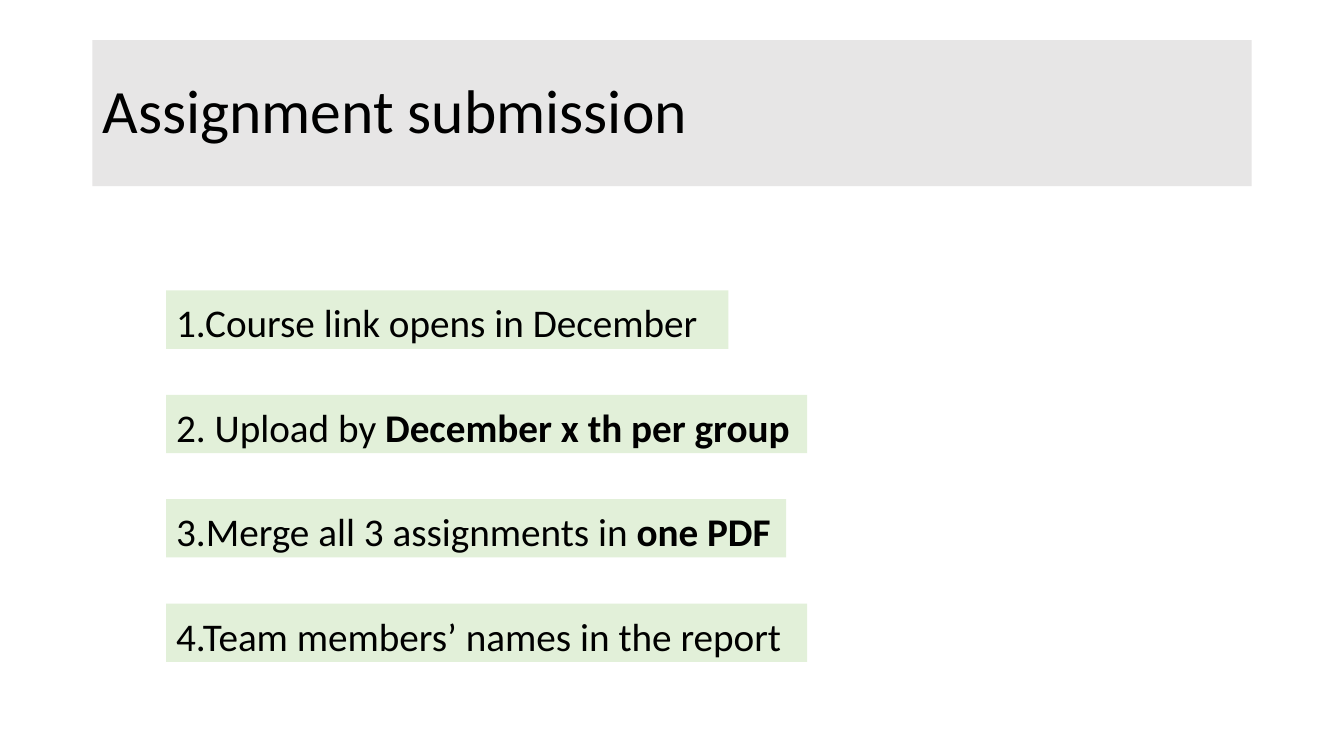
"""Build the assignment submission slide."""
from pptx import Presentation
from pptx.dml.color import RGBColor
from pptx.enum.text import MSO_ANCHOR, MSO_AUTO_SIZE, PP_ALIGN
from pptx.util import Cm, Pt

HEADING = "Assignment submission"
STEPS = [
    (14.17, [("1.Course link opens in December", False)]),
    (16.15, [("2. Upload by ", False), ("December x th per group", True)]),
    (15.62, [("3.Merge all 3 assignments in ", False), ("one PDF", True)]),
    (16.15, [("4.Team members’ names in the report", False)]),
]
FONT, INK, HEADING_FILL, STEP_FILL = "Calibri", "000000", "E7E6E6", "E2F0D9"
STEP_LEFT, STEP_TOP, STEP_HEIGHT, STEP_PITCH = 4.19, 7.32, 1.47, 2.63


def color(value):
    return RGBColor.from_string(value)


def write(box, runs, *, size, fill, spacing, after=0, anchor=MSO_ANCHOR.TOP):
    box.fill.solid()
    box.fill.fore_color.rgb = color(fill)
    frame = box.text_frame
    frame.word_wrap = True
    frame.auto_size = MSO_AUTO_SIZE.NONE
    frame.vertical_anchor = anchor
    paragraph = frame.paragraphs[0]
    paragraph.alignment = PP_ALIGN.LEFT
    paragraph.line_spacing = spacing
    paragraph.space_after = Pt(after)
    for words, bold in runs:
        run = paragraph.add_run()
        run.text = words
        run.font.name = FONT
        run.font.size = Pt(size)
        run.font.bold = bold
        run.font.color.rgb = color(INK)


def main():
    deck = Presentation()
    deck.slide_width, deck.slide_height = Cm(33.87), Cm(19.05)
    slide = deck.slides.add_slide(deck.slide_layouts[5])

    heading = slide.shapes.title
    heading.left, heading.top = Cm(2.33), Cm(1.01)
    heading.width, heading.height = Cm(29.21), Cm(3.68)
    write(heading, [(HEADING, False)], size=44, fill=HEADING_FILL,
          spacing=0.9, anchor=MSO_ANCHOR.MIDDLE)

    for row, (width, runs) in enumerate(STEPS):
        step = slide.shapes.add_textbox(
            Cm(STEP_LEFT), Cm(STEP_TOP + row * STEP_PITCH),
            Cm(width), Cm(STEP_HEIGHT))
        write(step, runs, size=28, fill=STEP_FILL, spacing=1.07, after=8)

    deck.save("out.pptx")


if __name__ == "__main__":
    main()
